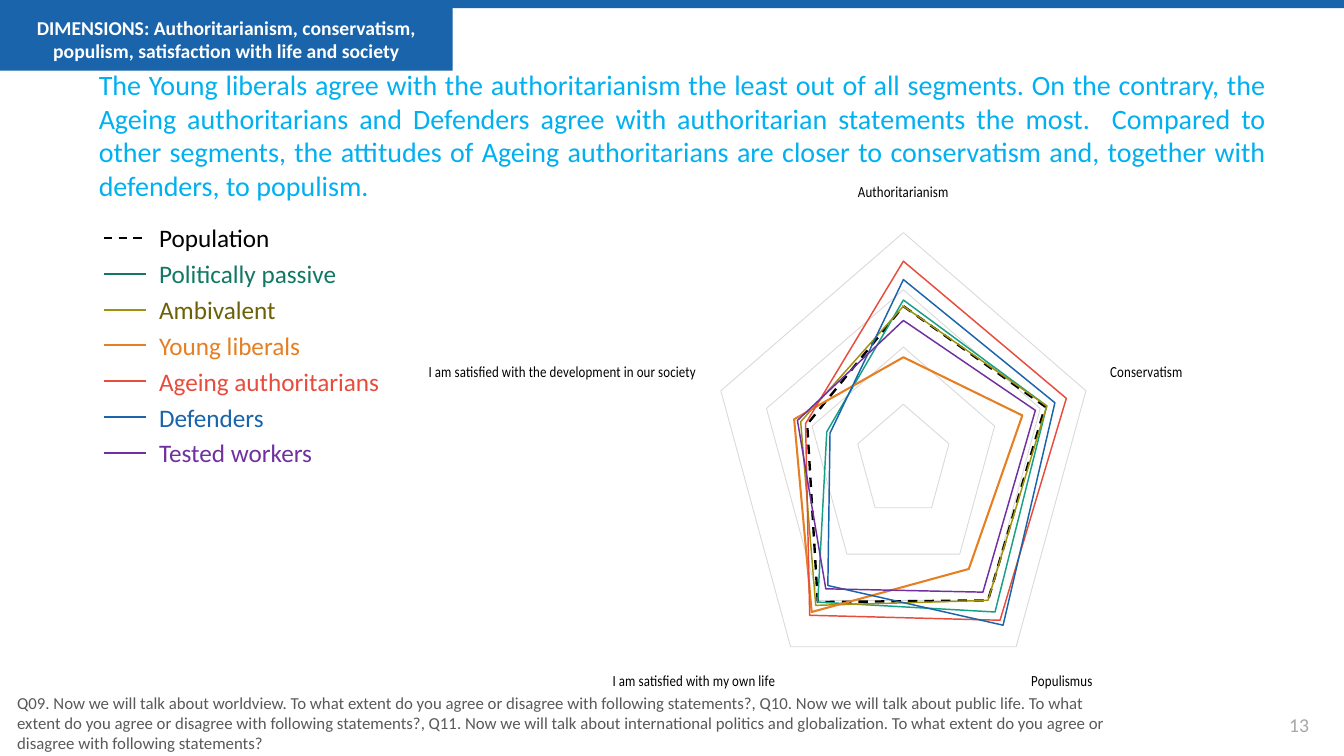
from dataclasses import dataclass

from lxml import etree
from pptx import Presentation
from pptx.chart.data import CategoryChartData
from pptx.dml.color import RGBColor
from pptx.enum.chart import XL_CHART_TYPE, XL_TICK_MARK
from pptx.enum.dml import MSO_LINE
from pptx.enum.shapes import MSO_CONNECTOR, MSO_SHAPE
from pptx.enum.text import MSO_ANCHOR, PP_ALIGN
from pptx.oxml.ns import qn
from pptx.util import Inches, Pt

RADAR = XL_CHART_TYPE.RADAR
DASH = MSO_LINE.DASH
STRAIGHT = MSO_CONNECTOR.STRAIGHT
RECTANGLE = MSO_SHAPE.RECTANGLE
TOP, MIDDLE = MSO_ANCHOR.TOP, MSO_ANCHOR.MIDDLE
LEFT, CENTER, JUSTIFY = PP_ALIGN.LEFT, PP_ALIGN.CENTER, PP_ALIGN.JUSTIFY
OUTSIDE = XL_TICK_MARK.OUTSIDE

SLIDE_W, SLIDE_H = 13.33, 7.5
PADDING = (0.1, 0.05, 0.1, 0.05)
FLUSH = (0, 0, 0, 0)


@dataclass(frozen=True)
class Theme:
    font: str = "Calibri"
    brand: str = "1964AA"
    on_brand: str = "FFFFFF"
    headline: str = "00B0F0"
    footnote: str = "595959"
    page: str = "A6A6A6"
    ink: str = "000000"
    grid: str = "D9D9D9"
    headline_size: float = 20
    legend_size: float = 18
    tag_size: float = 14
    footnote_size: float = 12
    axis_size: float = 11
    chart_size: float = 10.5


@dataclass(frozen=True)
class Segment:
    name: str
    label_color: str
    key_color: str
    line_color: str
    width: float
    scores: tuple
    dashed: bool = False


THEME = Theme()
DIMENSIONS = (
    "Authoritarianism",
    "Conservatism",
    "Populismus",
    "I am satisfied with my own life",
    "I am satisfied with the development in our society",
)
SEGMENTS = (
    Segment("Population", "000000", "000000", "000000", 2, (76, 87, 84, 85, 59), True),
    Segment("Politically passive", "107864", "107864", "16A085", 1.25, (79, 88, 91, 85, 47)),
    Segment("Ambivalent", "6B6208", "A0930B", "A0930B", 1.25, (76, 88, 84, 87, 63)),
    Segment("Young liberals", "E67E22", "E67E22", "E67E22", 1.75, (51, 73, 65, 91, 67)),
    Segment("Ageing authoritarians", "E74C3C", "E74C3C", "E74C3C", 1.25, (98, 100, 96, 93, 60)),
    Segment("Defenders", "1964AA", "1964AA", "1964AA", 1.25, (89, 93, 99, 75, 45)),
    Segment("Tested workers", "7030A0", "7030A0", "7030A0", 1.25, (69, 81, 79, 77, 65)),
)
TAG = "DIMENSIONS: Authoritarianism, conservatism, populism, satisfaction with life and society"
HEADLINE = (
    "The Young liberals agree with the authoritarianism the least out of all segments. "
    "On the contrary, the Ageing authoritarians and Defenders agree with authoritarian "
    "statements the most.  Compared to other segments, the attitudes of Ageing authoritarians "
    "are closer to conservatism and, together with defenders, to populism."
)
FOOTNOTE = (
    "Q09. Now we will talk about worldview. To what extent do you agree or disagree with "
    "following statements?, Q10. Now we will talk about public life. To what extent do you "
    "agree or disagree with following statements?, Q11. Now we will talk about international "
    "politics and globalization. To what extent do you agree or disagree with following statements?"
)


def inches(box):
    return [Inches(length) for length in box]


def rgb(color):
    return RGBColor.from_string(color)


def style_line(line, color, width, dashed=False):
    line.color.rgb = rgb(color)
    line.width = Pt(width)
    if dashed:
        line.dash_style = DASH


def write(frame, text, size, color, align=LEFT, anchor=TOP, insets=PADDING, bold=False):
    frame.word_wrap = True
    frame.vertical_anchor = anchor
    (frame.margin_left, frame.margin_top,
     frame.margin_right, frame.margin_bottom) = inches(insets)
    paragraph = frame.paragraphs[0]
    paragraph.alignment = align
    run = paragraph.add_run()
    run.text = text
    run.font.name = THEME.font
    run.font.size = Pt(size)
    run.font.bold = bold
    run.font.color.rgb = rgb(color)


def add_text(slide, box, *content, **layout):
    write(slide.shapes.add_textbox(*inches(box)).text_frame, *content, **layout)


def add_band(slide, box):
    band = slide.shapes.add_shape(RECTANGLE, *inches(box))
    band.shadow.inherit = False
    band.fill.solid()
    band.fill.fore_color.rgb = rgb(THEME.brand)
    band.line.fill.background()
    return band


def add_header(slide, box):
    left, top, width, height = box
    strip = 0.08
    add_band(slide, (left, top, width, strip))
    tag = add_band(slide, (left, top + strip, 4.49, height - strip))
    write(tag.text_frame, TAG, THEME.tag_size, THEME.on_brand,
          align=CENTER, anchor=MIDDLE, bold=True)


def add_legend(slide, box):
    left, top, width, height = box
    row = height / len(SEGMENTS)
    key, gap = 0.42, 0.03
    for index, segment in enumerate(SEGMENTS):
        y = top + index * row
        middle = y + 0.2
        sample = slide.shapes.add_connector(
            STRAIGHT, *inches((left, middle, left + key, middle)))
        style_line(sample.line, segment.key_color, 1.5, segment.dashed)
        etree.SubElement(sample._element.spPr, qn("a:effectLst"))
        add_text(slide, (left + key + gap, y, width - key - gap, 0.4),
                 segment.name, THEME.legend_size, segment.label_color)


def place_plot(chart, x, y, w, h):
    area = chart._chartSpace.chart.plotArea
    for old in area.findall(qn("c:layout")):
        area.remove(old)
    layout = etree.Element(qn("c:layout"))
    manual = etree.SubElement(layout, qn("c:manualLayout"))
    settings = (("layoutTarget", "inner"), ("xMode", "edge"), ("yMode", "edge"),
                ("x", x), ("y", y), ("w", w), ("h", h))
    for tag, value in settings:
        etree.SubElement(manual, qn(f"c:{tag}")).set("val", str(value))
    area.insert(0, layout)


def add_radar(slide, box):
    data = CategoryChartData(number_format="0.00")
    data.categories = DIMENSIONS
    for segment in SEGMENTS:
        data.add_series(segment.name, segment.scores)
    chart = slide.shapes.add_chart(RADAR, *inches(box), data).chart
    chart.has_title = False
    chart.has_legend = False
    chart.font.name = THEME.font
    chart.font.size = Pt(THEME.chart_size)
    chart.font.color.rgb = rgb(THEME.ink)
    place_plot(chart, 0.17, 0.12, 0.67, 0.77)

    dimensions = chart.category_axis
    dimensions.major_tick_mark = OUTSIDE
    dimensions.tick_labels.font.size = Pt(THEME.axis_size)
    dimensions.format.line.fill.background()
    dimensions.major_gridlines.format.line.fill.background()

    scores = chart.value_axis
    scores.minimum_scale, scores.maximum_scale, scores.major_unit = 0, 112, 28
    style_line(scores.major_gridlines.format.line, THEME.grid, 0.75)
    scores.visible = False

    plot = chart.plots[0]
    plot.vary_by_categories = False
    for series, segment in zip(plot.series, SEGMENTS):
        style_line(series.format.line, segment.line_color, segment.width, segment.dashed)


def add_footer(slide, box):
    left, top, width, height = box
    page = 0.89
    add_text(slide, (left + 0.17, top, 10.99, height), FOOTNOTE,
             THEME.footnote_size, THEME.footnote, anchor=MIDDLE, insets=FLUSH)
    add_text(slide, (left + width - page, top + 0.15, page, 0.4), "13",
             THEME.tag_size, THEME.page, align=CENTER, anchor=MIDDLE)


def build_dimensions_slide(deck):
    slide = deck.slides.add_slide(deck.slide_layouts[6])
    add_radar(slide, (4.25, 1.6, 8.05, 5.9))
    add_legend(slide, (1.03, 2.16, 3.62, 2.49))
    add_text(slide, (0, 0.67, 12.56, 0.71), HEADLINE, THEME.headline_size,
             THEME.headline, align=JUSTIFY, insets=(0.98, 0, 0, 0))
    add_footer(slide, (0, 6.84, SLIDE_W, 0.66))
    add_header(slide, (0, 0, SLIDE_W, 0.7))


def main():
    deck = Presentation()
    deck.slide_width, deck.slide_height = Inches(SLIDE_W), Inches(SLIDE_H)
    build_dimensions_slide(deck)
    deck.save("out.pptx")


if __name__ == "__main__":
    main()
